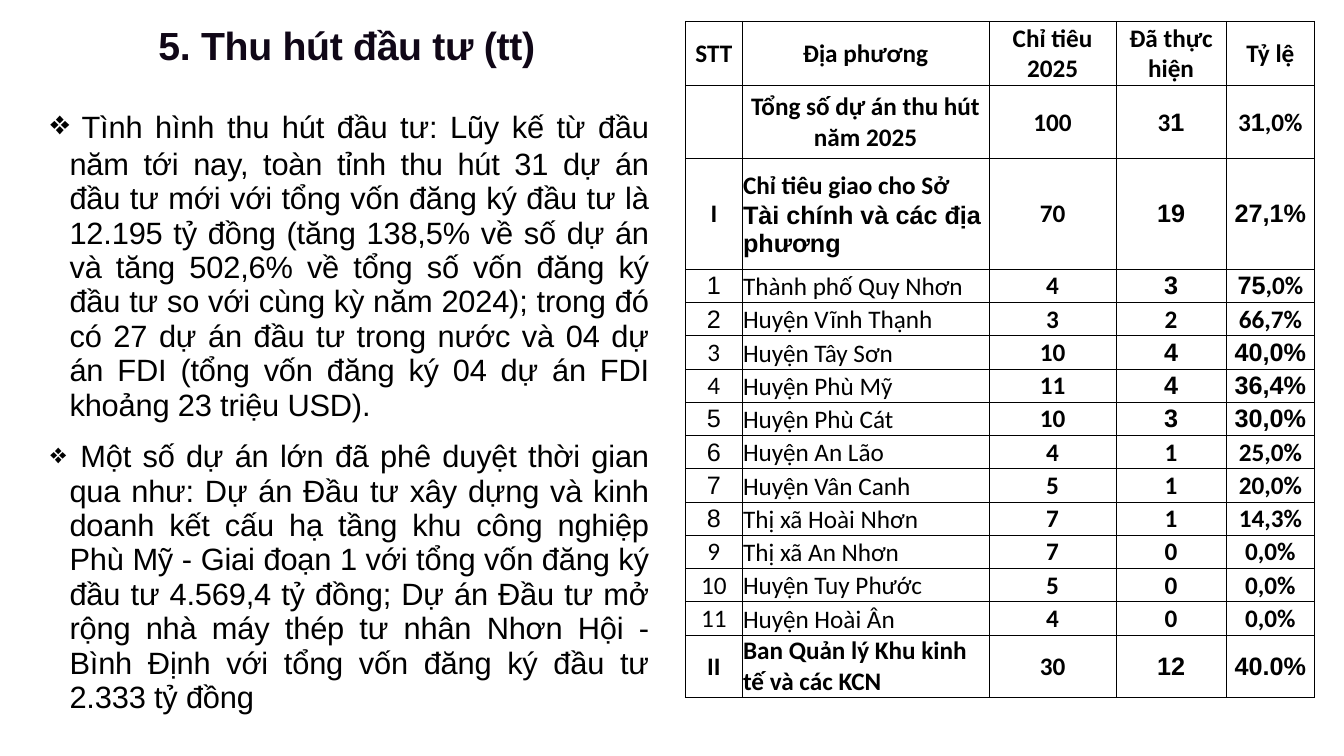
"""Build the investment attraction slide with its table of local targets."""
from lxml import etree
from pptx import Presentation
from pptx.dml.color import RGBColor
from pptx.enum.text import MSO_ANCHOR, PP_ALIGN
from pptx.oxml.ns import qn
from pptx.util import Inches, Pt

LEFT, CENTER, JUSTIFY = PP_ALIGN.LEFT, PP_ALIGN.CENTER, PP_ALIGN.JUSTIFY
MIDDLE, BOTTOM = MSO_ANCHOR.MIDDLE, MSO_ANCHOR.BOTTOM
COLORS = {"title": "100717", "text": "000000", "line": "000000"}


def add_run(para, text, size, face, bold=False, color="text", spacing=0):
    """Add one formatted run, with letter spacing in hundredths of a point."""
    run = para.add_run()
    run.text = text
    run.font.size = Pt(size)
    run.font.name = face
    run.font.bold = bold
    run.font.color.rgb = RGBColor.from_string(COLORS[color])
    if spacing:
        run._r.get_or_add_rPr().set("spc", str(spacing))


def add_grid(slide, left, top, widths, heights):
    """Add a plain table with the given column widths and row heights."""
    frame = slide.shapes.add_table(
        len(heights), len(widths), Inches(left), Inches(top),
        Inches(sum(widths)), Inches(sum(heights)))
    table = frame.table
    table.first_row = table.horz_banding = False
    for col, width in zip(table.columns, widths):
        col.width = Inches(width)
    for row, height in zip(table.rows, heights):
        row.height = Inches(height)
    return table


prs = Presentation()
prs.slide_width, prs.slide_height = Inches(13.33), Inches(7.5)
slide = prs.slides.add_slide(prs.slide_layouts[5])

title = slide.shapes.title
title.left, title.top = Inches(1.44), Inches(0.16)
title.width, title.height = Inches(4), Inches(0.57)
title.text_frame.word_wrap = False
title.text_frame.vertical_anchor = MIDDLE
para = title.text_frame.paragraphs[0]
para.alignment = CENTER
add_run(para, "5. Thu hút đầu tư (tt)", 28, "Arial", True, "title", -20)

points = [
    (24, "Calibri",
     "Tình hình thu hút đầu tư: Lũy kế từ đầu năm tới nay, toàn tỉnh thu hút "
     "31 dự án đầu tư mới với tổng vốn đăng ký đầu tư là 12.195 tỷ đồng (tăng "
     "138,5% về số dự án và tăng 502,6% về tổng số vốn đăng ký đầu tư so với "
     "cùng kỳ năm 2024); trong đó có 27 dự án đầu tư trong nước và 04 dự án "
     "FDI (tổng vốn đăng ký 04 dự án FDI khoảng 23 triệu USD)."),
    (20, "Arial",
     "Một số dự án lớn đã phê duyệt thời gian qua như: Dự án Đầu tư xây dựng "
     "và kinh doanh kết cấu hạ tầng khu công nghiệp Phù Mỹ - Giai đoạn 1 với "
     "tổng vốn đăng ký đầu tư 4.569,4 tỷ đồng; Dự án Đầu tư mở rộng nhà máy "
     "thép tư nhân Nhơn Hội - Bình Định với tổng vốn đăng ký đầu tư 2.333 tỷ "
     "đồng"),
]
cell = add_grid(slide, 0.4, 0.81, [6.14], [6.53]).cell(0, 0)
cell.fill.background()
cell.vertical_anchor = MIDDLE
for i, (size, face, text) in enumerate(points):
    para = cell.text_frame.add_paragraph() if i else cell.text_frame.paragraphs[0]
    para.alignment = JUSTIFY
    para.space_before = Pt(6 if i else 0)
    para.space_after = Pt(6)
    props = para._p.get_or_add_pPr()
    props.set("marL", str(Inches(0.19)))
    props.set("indent", str(Inches(-0.19)))
    etree.SubElement(props, qn("a:buChar")).set("char", "❖")
    add_run(para, " ", size, face, spacing=-10)
    add_run(para, text, 22, "Arial", spacing=-10)

# Text after an odd number of bars is set in Arial, the rest in Calibri.
rows = [
    ("STT", "Địa phương", "Chỉ tiêu 2025", "Đã thực hiện", "Tỷ lệ"),
    ("", "Tổng số dự án thu hút năm 2025", "100", "3|1", "3|1|,0%"),
    ("I", "Chỉ tiêu giao cho Sở |Tài chính và các địa phương", "70", "|19", "|27,1%"),
    ("|1", "Thành phố Quy Nhơn", "4", "|3", "|75|,0%"),
    ("|2", "Huyện Vĩnh Thạnh", "3", "2", "66,7%"),
    ("3", "Huyện Tây Sơn", "10", "|4", "|40,0%"),
    ("4", "Huyện Phù Mỹ", "11", "|4", "|36,4%"),
    ("|5", "Huyện Phù Cát", "10", "|3", "|30,0%"),
    ("|6", "Huyện An Lão", "4", "1", "25,0%"),
    ("|7", "Huyện Vân Canh", "5", "1", "20,0%"),
    ("|8", "Thị xã Hoài Nhơn", "7", "1", "14,3%"),
    ("9", "Thị xã An Nhơn", "7", "0", "0,0%"),
    ("10", "Huyện Tuy Phước", "5", "0", "0,0%"),
    ("11", "Huyện Hoài Ân", "4", "0", "0,0%"),
    ("II", "Ban Quản lý Khu kinh tế và các KCN", "30", "|12", "|40.0%"),
]
heights = [0.64, 0.72, 1.1] + [0.33] * 11 + [0.56]
table = add_grid(slide, 6.8, 0.21, [0.56, 2.45, 1.26, 1.09, 0.88], heights)
for r, row in enumerate(rows):
    local = 3 <= r <= 13
    for c, text in enumerate(row):
        cell = table.cell(r, c)
        cell.margin_left = cell.margin_right = cell.margin_top = Inches(0.01)
        cell.margin_bottom = 0
        cell.vertical_anchor = BOTTOM if local and c == 1 else MIDDLE
        for side in ("lnL", "lnR", "lnT", "lnB"):
            line = etree.SubElement(cell._tc.get_or_add_tcPr(), qn("a:" + side))
            line.set("w", str(Pt(0.5)))
            fill = etree.SubElement(line, qn("a:solidFill"))
            etree.SubElement(fill, qn("a:srgbClr")).set("val", COLORS["line"])
        cell.fill.background()
        para = cell.text_frame.paragraphs[0]
        para.alignment = LEFT if c == 1 and r > 1 else CENTER
        for i, part in enumerate(text.split("|")):
            if part:
                face = "Arial" if i % 2 else "Calibri"
                add_run(para, part, 18, face, not local or c > 1)

prs.save("out.pptx")
